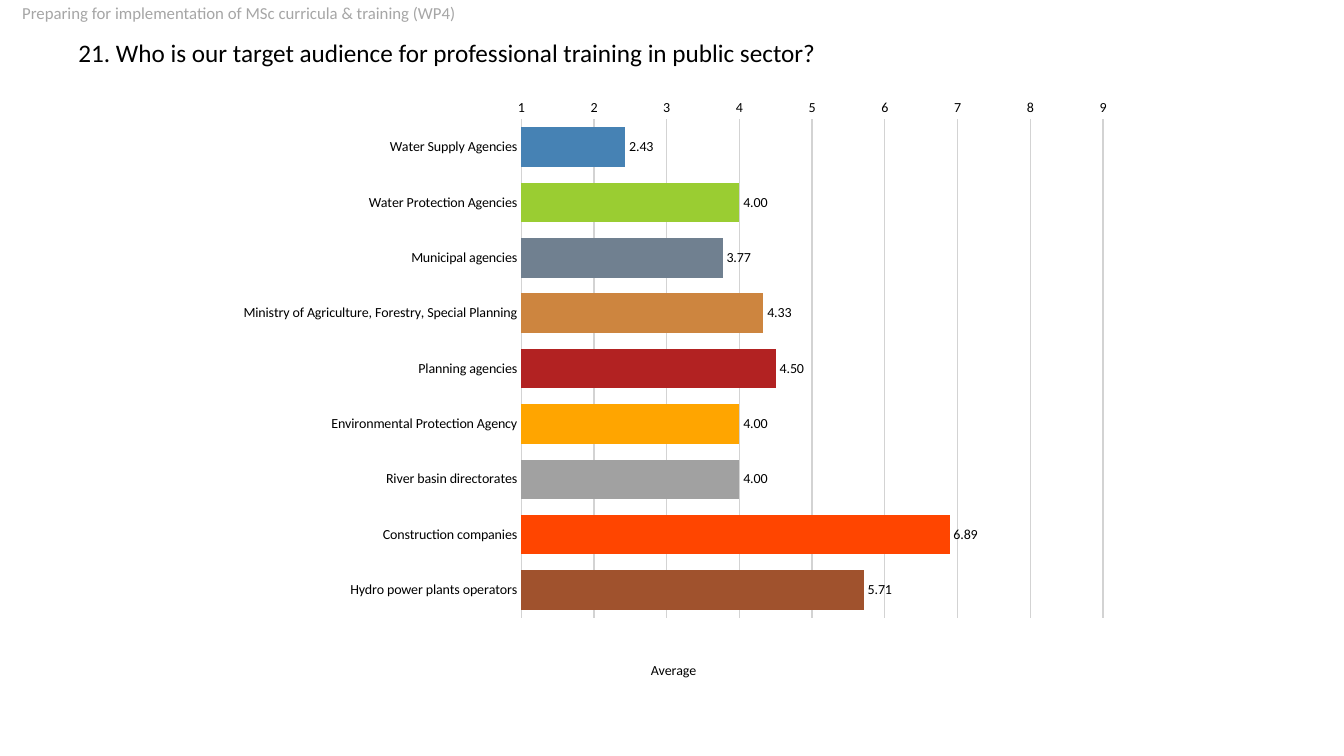
from dataclasses import dataclass

from lxml import etree
from pptx import Presentation
from pptx.chart.data import CategoryChartData
from pptx.dml.color import RGBColor
from pptx.enum.chart import XL_AXIS_CROSSES as Crosses
from pptx.enum.chart import XL_CHART_TYPE as ChartType
from pptx.enum.chart import XL_LABEL_POSITION as LabelPosition
from pptx.enum.chart import XL_TICK_MARK as TickMark
from pptx.enum.text import MSO_ANCHOR as Anchor
from pptx.oxml.ns import qn
from pptx.util import Inches, Pt

SECTION = "Preparing for implementation of MSc curricula & training (WP4)"
QUESTION = "21. Who is our target audience for professional training in public sector?"
AXIS_CAPTION = "Average"
AUDIENCES = [
    ("Water Supply Agencies", 2.43, "4682B4"),
    ("Water Protection Agencies", 4.00, "9ACD32"),
    ("Municipal agencies", 3.77, "708090"),
    ("Ministry of Agriculture, Forestry, Special Planning", 4.33, "CD853F"),
    ("Planning agencies", 4.50, "B22222"),
    ("Environmental Protection Agency", 4.00, "FFA500"),
    ("River basin directorates", 4.00, "A1A1A1"),
    ("Construction companies", 6.89, "FF4500"),
    ("Hydro power plants operators", 5.71, "A0522D"),
]
SECTION_BOX = (0, 0, 13.33, 0.25)
QUESTION_BOX = (0.68, 0.24, 12, 0.6)
CHART_BOX = (2.18, 0.99, 8.98, 5.91)
PLOT_BOX = (5.17, 1.11, 5.77, 5.01)
CAPTION_AT = (6.43, 6.53)


@dataclass(frozen=True)
class Theme:
    font: str = "Calibri"
    ink: str = "000000"
    muted: str = "A6A6A6"
    grid: str = "D3D3D3"
    question_size: int = 18
    section_size: int = 12
    chart_size: int = 10


THEME = Theme()


def style_font(font, size, color=THEME.ink):
    font.name = THEME.font
    font.size = Pt(size)
    font.bold = False
    font.color.rgb = RGBColor.from_string(color)


def add_line(slide, box, words, size, color, anchor, inset):
    frame = slide.shapes.add_textbox(*map(Inches, box)).text_frame
    frame.word_wrap = True
    frame.vertical_anchor = anchor
    frame.margin_left = Inches(inset)
    paragraph = frame.paragraphs[0]
    paragraph.line_spacing = 0.9
    run = paragraph.add_run()
    run.text = words
    style_font(run.font, size, color)


def place_in_chart(parent, index, box, inner=False):
    for previous in parent.findall(qn("c:layout")):
        parent.remove(previous)
    layout = etree.Element(qn("c:layout"))
    parent.insert(index, layout)
    manual = etree.SubElement(layout, qn("c:manualLayout"))
    left, top, width, height = CHART_BOX
    settings = [("layoutTarget", "inner")] if inner else []
    settings += [("xMode", "edge"), ("yMode", "edge")]
    lengths = (box[0] - left, box[1] - top, *box[2:])
    settings += [
        (key, f"{length / whole:.4f}")
        for key, length, whole in zip("xywh", lengths, (width, height) * 2)
    ]
    for key, setting in settings:
        etree.SubElement(manual, qn(f"c:{key}")).set("val", setting)


def add_audience_chart(slide):
    names, averages, colors = zip(*AUDIENCES)
    scores = CategoryChartData(number_format="0.00")
    scores.categories = names
    scores.add_series("Series 1", averages)
    chart = slide.shapes.add_chart(
        ChartType.BAR_CLUSTERED, *map(Inches, CHART_BOX), scores
    ).chart
    chart.has_legend = False
    chart.has_title = False
    style_font(chart.font, THEME.chart_size)

    plot = chart.plots[0]
    plot.gap_width = 40
    plot.vary_by_categories = False
    for index, color in enumerate(colors):
        fill = plot.series[0].points[index].format.fill
        fill.solid()
        fill.fore_color.rgb = RGBColor.from_string(color)

    plot.has_data_labels = True
    labels = plot.data_labels
    labels.show_value = True
    labels.number_format = "0.00"
    labels.number_format_is_linked = False
    labels.position = LabelPosition.OUTSIDE_END
    style_font(labels.font, THEME.chart_size)

    audience_axis, average_axis = chart.category_axis, chart.value_axis
    for axis in (audience_axis, average_axis):
        axis.major_tick_mark = axis.minor_tick_mark = TickMark.NONE
        axis.format.line.fill.background()
        style_font(axis.tick_labels.font, THEME.chart_size)
    audience_axis.reverse_order = True
    audience_axis.crosses = Crosses.MAXIMUM

    average_axis.minimum_scale, average_axis.maximum_scale = 1, 9
    average_axis.major_unit = 1
    average_axis.tick_labels.number_format = "General"
    average_axis.tick_labels.number_format_is_linked = False
    gridline = average_axis.major_gridlines.format.line
    gridline.color.rgb = RGBColor.from_string(THEME.grid)
    gridline.width = Pt(1)

    caption = average_axis.axis_title
    run = caption.text_frame.paragraphs[0].add_run()
    run.text = AXIS_CAPTION
    style_font(run.font, THEME.chart_size)
    place_in_chart(caption._element, 1, CAPTION_AT)
    place_in_chart(plot._element.getparent(), 0, PLOT_BOX, inner=True)


def main():
    deck = Presentation()
    deck.slide_width, deck.slide_height = Inches(13.33), Inches(7.5)
    slide = deck.slides.add_slide(deck.slide_layouts[6])
    add_line(slide, QUESTION_BOX, QUESTION, THEME.question_size, THEME.ink, Anchor.MIDDLE, 0.1)
    add_line(slide, SECTION_BOX, SECTION, THEME.section_size, THEME.muted, Anchor.TOP, 0.22)
    add_audience_chart(slide)
    deck.save("out.pptx")


if __name__ == "__main__":
    main()
